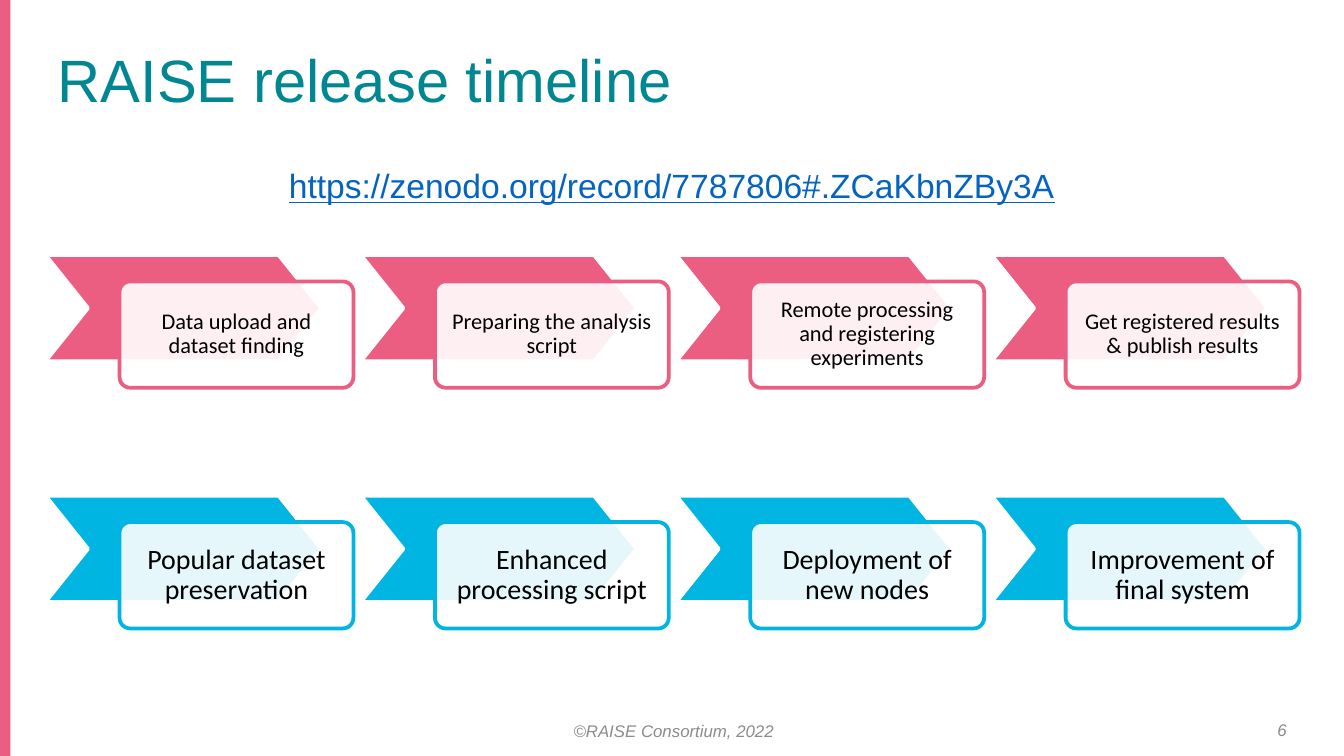
from lxml import etree
from pptx import Presentation
from pptx import util as u
from pptx.dml.color import RGBColor
from pptx.enum import shapes, text
from pptx.oxml.ns import qn

Cm, Pt = u.Cm, u.Pt
PINK, BLUE, WHITE = "EB5D81", "00B5E2", "FFFFFF"

# Content
TITLE = "RAISE release timeline"
LINK = "https://zenodo.org/record/7787806#.ZCaKbnZBy3A"
FOOTER = "©RAISE Consortium, 2022"
PAGE_NUMBER = "6"
TIMELINES = [
    dict(top=4.82, color=PINK, size=12, inset=0.23, steps=[
        "Data upload and dataset finding",
        "Preparing the analysis script",
        "Remote processing and registering experiments",
        "Get registered results & publish results"]),
    dict(top=9.37, color=BLUE, size=15, inset=0.3, steps=[
        "Popular dataset preservation",
        "Enhanced processing script",
        "Deployment of new nodes",
        "Improvement of final system"]),
]

# Timeline grid, in centimetres
LEFT, PITCH = 0.86, 5.96
CHEVRON_WIDTH, CARD_WIDTH, STEP_HEIGHT = 5.21, 4.42, 2.01
CARD_SHIFT_X, CARD_SHIFT_Y = 1.4, 0.5


def rgb(value):
    return RGBColor.from_string(value)


def write(shape, content, size, color, font="Arial", align="LEFT", anchor="MIDDLE",
          inset=(0.25, 0.13), line_spacing=None, italic=False, underline=False):
    frame = shape.text_frame
    frame.word_wrap = True
    frame.vertical_anchor = text.MSO_ANCHOR[anchor]
    frame.margin_left = frame.margin_right = Cm(inset[0])
    frame.margin_top = frame.margin_bottom = Cm(inset[1])
    paragraph = frame.paragraphs[0]
    paragraph.alignment = text.PP_ALIGN[align]
    if line_spacing:
        paragraph.line_spacing = line_spacing
    run = paragraph.add_run()
    run.text = content
    run.font.name, run.font.size = font, Pt(size)
    run.font.italic, run.font.underline = italic, underline
    run.font.color.rgb = rgb(color)


def add_text(left, top, width, height, content, **style):
    box = slide.shapes.add_textbox(Cm(left), Cm(top), Cm(width), Cm(height))
    write(box, content, **style)


def add_block(parent, kind, left, top, width, height, fill, line=None, adjust=None, alpha=None):
    shape = parent.add_shape(shapes.MSO_SHAPE[kind], Cm(left), Cm(top), Cm(width), Cm(height))
    shape.shadow.inherit = False
    shape.fill.solid()
    shape.fill.fore_color.rgb = rgb(fill)
    if alpha:
        color = shape.fill._xPr.find(qn("a:solidFill"))[0]
        etree.SubElement(color, qn("a:alpha")).set("val", str(alpha * 1000))
    if line:
        shape.line.color.rgb = rgb(line)
        shape.line.width = Pt(2)
    else:
        shape.line.fill.background()
    if adjust:
        shape.adjustments[0] = adjust
    return shape


presentation = Presentation()
presentation.slide_width, presentation.slide_height = Cm(25.4), Cm(14.29)
slide = presentation.slides.add_slide(presentation.slide_layouts[6])

# Side bar, title and link
add_block(slide.shapes, "RECTANGLE", 0, 0, 0.2, 14.29, PINK)
add_text(0.84, 0.81, 17.78, 1.5, TITLE, size=32, color="008792",
         anchor="BOTTOM", line_spacing=0.9)
add_text(5.21, 3, 16, 1.01, LINK, size=18, color="0563C1", underline=True)

# Timelines: a chevron behind a card for each step
for timeline in TIMELINES:
    group = slide.shapes.add_group_shape().shapes
    color, top = timeline["color"], timeline["top"]
    for index, step in enumerate(timeline["steps"]):
        left = LEFT + index * PITCH
        add_block(group, "CHEVRON", left, top, CHEVRON_WIDTH, STEP_HEIGHT,
                  color, line=WHITE, adjust=0.4)
        card = add_block(group, "ROUNDED_RECTANGLE", left + CARD_SHIFT_X, top + CARD_SHIFT_Y,
                         CARD_WIDTH, STEP_HEIGHT, WHITE, line=color, adjust=0.1, alpha=90)
        write(card, step, size=timeline["size"], color="000000", font="Calibri",
              align="CENTER", inset=(timeline["inset"],) * 2, line_spacing=0.9)

# Footer
add_text(6.81, 13.41, 11.84, 0.79, FOOTER, size=9, color="8C8C8C", align="CENTER", italic=True)
add_text(22.61, 13.41, 1.96, 0.76, PAGE_NUMBER, size=9, color="898989",
         align="RIGHT", italic=True)

presentation.save("out.pptx")
